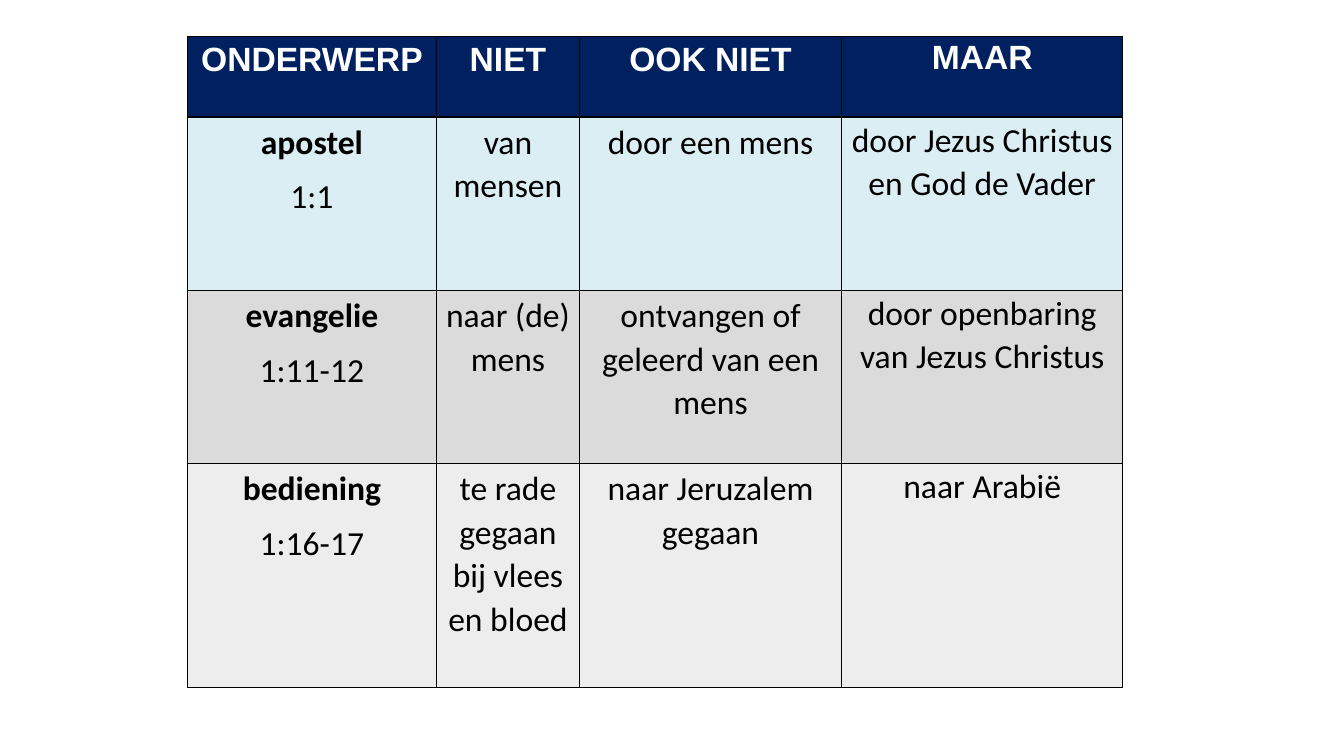
from dataclasses import dataclass

from lxml.etree import SubElement
from pptx import Presentation
from pptx.dml.color import RGBColor as Color
from pptx.enum.text import PP_ALIGN as Align
from pptx.oxml.ns import qn
from pptx.util import Pt

HEADINGS = ("ONDERWERP", "NIET", "OOK NIET", "MAAR")
TOPICS = (
    ("apostel", "1:1", "van mensen", "door een mens", "door Jezus Christus en God de Vader"),
    ("evangelie", "1:11-12", "naar (de) mens", "ontvangen of geleerd van een mens",
     "door openbaring van Jezus Christus"),
    ("bediening", "1:16-17", "te rade gegaan bij vlees en bloed", "naar Jeruzalem gegaan", "naar Arabië"),
)
COLUMN_WIDTHS = (177.84, 102.24, 187.2, 200.88)
ROW_HEIGHTS = (57.6, 123.84, 123.84, 159.84)
TABLE_LEFT, TABLE_TOP = 133.92, 25.92
MARGINS = (4.32, 2.16, 4.32, 2.16)
LAST_COLUMN_MARGINS = (0.72, 0.72, 0.72, 0)


@dataclass(frozen=True)
class Theme:
    """Colours, fonts and sizes of the table."""
    row_fills: tuple = ("002060", "DBEEF4", "DBDBDB", "EDEDED")
    heading_color: str = "FFFFFF"
    body_color: str = "000000"
    border_color: str = "000000"
    heading_font: str = "Arial"
    body_font: str = "Calibri"
    size: float = 24
    border_width: float = 1


THEME = Theme()


def write_text(paragraph, text, *, bold=False, font=THEME.body_font, color=THEME.body_color):
    """Write one centred paragraph with the given format."""
    paragraph.alignment = Align.CENTER
    paragraph.line_spacing = 1.06
    paragraph.space_after = Pt(8)
    run = paragraph.add_run()
    run.text = text
    run.font.name = font
    run.font.size = Pt(THEME.size)
    run.font.bold = bold
    run.font.color.rgb = Color.from_string(color)


def format_cell(cell, fill, margins):
    """Set the borders, fill and margins of a cell."""
    properties = cell._tc.get_or_add_tcPr()
    for side in ("a:lnL", "a:lnR", "a:lnT", "a:lnB"):
        line = SubElement(properties, qn(side), w=str(Pt(THEME.border_width)))
        SubElement(SubElement(line, qn("a:solidFill")), qn("a:srgbClr"), val=THEME.border_color)
    cell.fill.solid()
    cell.fill.fore_color.rgb = Color.from_string(fill)
    cell.margin_left, cell.margin_top, cell.margin_right, cell.margin_bottom = map(Pt, margins)


def add_comparison_table(slide):
    """Add the table and fill it from the content."""
    frame = slide.shapes.add_table(
        len(ROW_HEIGHTS), len(COLUMN_WIDTHS), Pt(TABLE_LEFT), Pt(TABLE_TOP),
        Pt(sum(COLUMN_WIDTHS)), Pt(sum(ROW_HEIGHTS)))
    table = frame.table
    table.horz_banding = False
    table.first_row = False
    for column, width in zip(table.columns, COLUMN_WIDTHS):
        column.width = Pt(width)
    for row, height, fill in zip(table.rows, ROW_HEIGHTS, THEME.row_fills):
        row.height = Pt(height)
        for index, cell in enumerate(row.cells):
            is_last = index == len(COLUMN_WIDTHS) - 1
            format_cell(cell, fill, LAST_COLUMN_MARGINS if is_last else MARGINS)
    for index, heading in enumerate(HEADINGS):
        write_text(table.cell(0, index).text_frame.paragraphs[0], heading, bold=True,
                   font=THEME.heading_font, color=THEME.heading_color)
    for row_index, (topic, verses, *answers) in enumerate(TOPICS, start=1):
        topic_frame = table.cell(row_index, 0).text_frame
        write_text(topic_frame.paragraphs[0], topic, bold=True)
        write_text(topic_frame.add_paragraph(), verses)
        for index, answer in enumerate(answers, start=1):
            write_text(table.cell(row_index, index).text_frame.paragraphs[0], answer)


def main():
    """Build and save the slide."""
    presentation = Presentation()
    presentation.slide_width, presentation.slide_height = Pt(960), Pt(540)
    slide = presentation.slides.add_slide(presentation.slide_layouts[6])
    add_comparison_table(slide)
    presentation.save("out.pptx")


if __name__ == "__main__":
    main()
